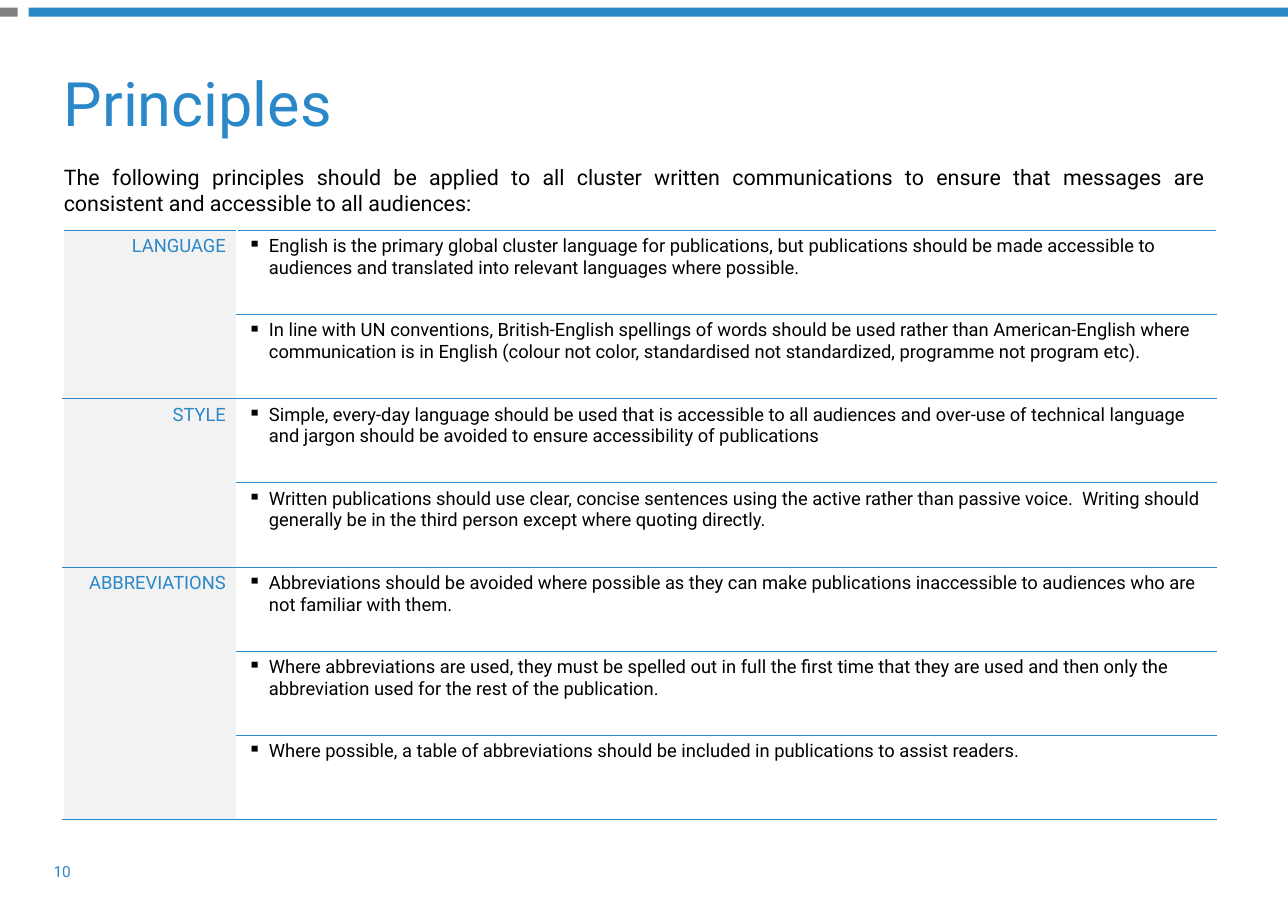
"""Build the Principles slide with its table of writing rules."""
from lxml.etree import SubElement
from pptx import Presentation
from pptx.dml.color import RGBColor
from pptx.enum.shapes import MSO_SHAPE
from pptx.enum.text import MSO_ANCHOR, PP_ALIGN
from pptx.oxml.ns import qn
from pptx.util import Inches, Pt

BLUE, GREY, PALE, WHITE, BLACK = "2A87C8", "808080", "F2F2F2", "FFFFFF", "000000"

deck = Presentation()
deck.slide_width, deck.slide_height = Inches(11.69), Inches(8.27)
slide = deck.slides.add_slide(deck.slide_layouts[5])
shapes = slide.shapes


def area(left, top, width, height):
    """Turn percentages of the slide into lengths."""
    wide, high = deck.slide_width / 100, deck.slide_height / 100
    return int(left * wide), int(top * high), int(width * wide), int(height * high)


def style(frame, text, size, color, align):
    """Fill a frame with one formatted paragraph and return it."""
    frame.text = text
    frame.word_wrap = True
    para = frame.paragraphs[0]
    para.alignment = align
    for run in para.runs:
        run.font.name, run.font.size = "Roboto", Pt(size)
        run.font.color.rgb = RGBColor.from_string(color)
    return para


marks = [
    (MSO_SHAPE.RECTANGLE, (2.22, 0.85, 97.78, 0.97), BLUE),
    (MSO_SHAPE.RECTANGLE, (0, 0.85, 1.37, 0.97), GREY),
    (MSO_SHAPE.OVAL, (3.51, 93.83, 2.65, 3.75), WHITE),
]
for kind, place, color in marks:
    mark = shapes.add_shape(kind, *area(*place))
    mark.shadow.inherit = False
    mark.fill.solid()
    mark.fill.fore_color.rgb = RGBColor.from_string(color)
    mark.line.fill.background()
frame = mark.text_frame
frame.margin_left = frame.margin_right = frame.margin_top = frame.margin_bottom = 0
frame.vertical_anchor = MSO_ANCHOR.MIDDLE
style(frame, "10", 10, BLUE, PP_ALIGN.CENTER)

title = shapes.title
title.left, title.top, title.width, title.height = area(4.11, 5.93, 92.39, 10.52)
title.text_frame.vertical_anchor = MSO_ANCHOR.MIDDLE
style(title.text_frame, "Principles", 40, BLUE, PP_ALIGN.JUSTIFY)

intro = shapes.add_textbox(*area(4.11, 17.41, 90.33, 8.71))
style(
    intro.text_frame,
    "The following principles should be applied to all cluster written communications "
    "to ensure that messages are consistent and accessible to all audiences:",
    14, BLACK, PP_ALIGN.JUSTIFY,
)

topics = {
    "LANGUAGE": [
        "English is the primary global cluster language for publications, but publications "
        "should be made accessible to audiences and translated into relevant languages "
        "where possible.",
        "In line with UN conventions, British-English spellings of words should be used "
        "rather than American-English where communication is in English (colour not color, "
        "standardised not standardized, programme not program etc).",
    ],
    "STYLE": [
        "Simple, every-day language should be used that is accessible to all audiences and "
        "over-use of technical language and jargon should be avoided to ensure "
        "accessibility of publications",
        "Written publications should use clear, concise sentences using the active rather "
        "than passive voice.  Writing should generally be in the third person except where "
        "quoting directly.",
    ],
    "ABBREVIATIONS": [
        "Abbreviations should be avoided where possible as they can make publications "
        "inaccessible to audiences who are not familiar with them.",
        "Where abbreviations are used, they must be spelled out in full the first time that "
        "they are used and then only the abbreviation used for the rest of the publication.",
        "Where possible, a table of abbreviations should be included in publications to "
        "assist readers.",
    ],
}
count = sum(len(rules) for rules in topics.values())
table = shapes.add_table(count, 2, *area(4.88, 25.27, 89.57, 64.69)).table
table.first_row = table.horz_banding = False
for column, share in zip(table.columns, (13.52, 76.05)):
    column.width = int(deck.slide_width * share / 100)

for row in table.rows:
    for cell, color in zip(row.cells, (PALE, WHITE)):
        props = cell._tc.get_or_add_tcPr()
        for side, tint, width in (
            ("L", WHITE, 1), ("R", WHITE, 1), ("T", BLUE, 0.5), ("B", BLUE, 0.5)
        ):
            edge = SubElement(props, qn(f"a:ln{side}"), w=str(Pt(width)))
            SubElement(SubElement(edge, qn("a:solidFill")), qn("a:srgbClr"), val=tint)
        cell.fill.solid()
        cell.fill.fore_color.rgb = RGBColor.from_string(color)

first = 0
for topic, rules in topics.items():
    last = first + len(rules) - 1
    head = table.cell(first, 0)
    head.merge(table.cell(last, 0))
    style(head.text_frame, topic, 12, BLUE, PP_ALIGN.RIGHT)
    for index, rule in enumerate(rules, first):
        para = style(table.cell(index, 1).text_frame, rule, 12, BLACK, PP_ALIGN.LEFT)
        props = para._p.get_or_add_pPr()
        props.set("marL", str(Inches(0.19)))
        props.set("indent", str(-Inches(0.19)))
        SubElement(props, qn("a:buChar"), char="▪")
    first = last + 1

deck.save("out.pptx")
